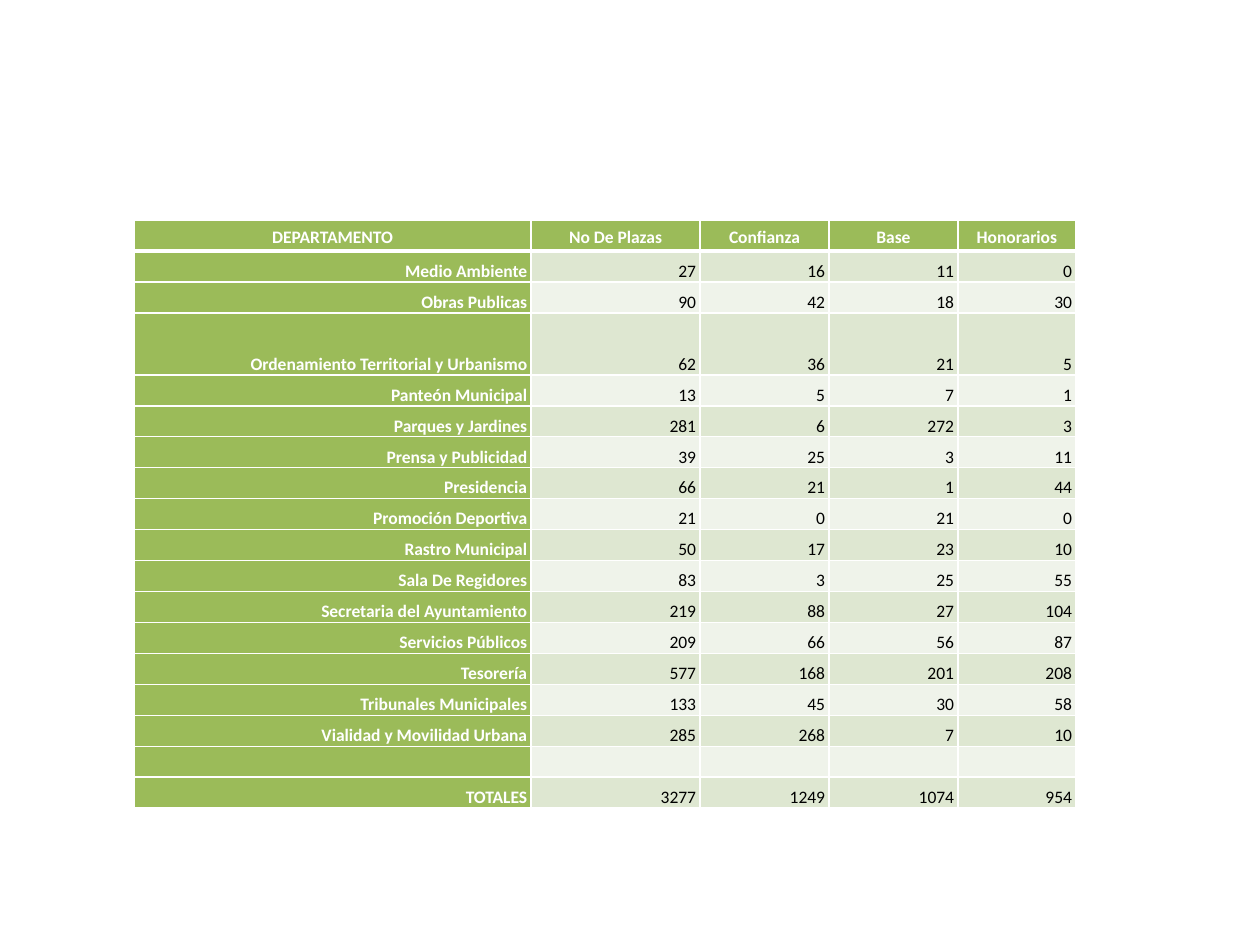
from lxml import etree
from pptx import Presentation, util as u
from pptx.dml.color import RGBColor
from pptx.enum import text
from pptx.oxml.ns import qn

PX = u.Inches(1) / 126
GREEN, WHITE, BLACK = "9BBB59", "FFFFFF", "000000"
BANDS = ["EFF3EA", "DEE7D1"]
COLUMN_WIDTHS = [397, 169, 129, 129, 118]
ROW_HEIGHT = 31
TALL_ROW = 3
STAFFING = [
    ("DEPARTAMENTO", "No De Plazas", "Confianza", "Base", "Honorarios"),
    ("Medio Ambiente", 27, 16, 11, 0),
    ("Obras Publicas", 90, 42, 18, 30),
    ("Ordenamiento Territorial y Urbanismo", 62, 36, 21, 5),
    ("Panteón Municipal", 13, 5, 7, 1),
    ("Parques y Jardines", 281, 6, 272, 3),
    ("Prensa y Publicidad", 39, 25, 3, 11),
    ("Presidencia", 66, 21, 1, 44),
    ("Promoción Deportiva", 21, 0, 21, 0),
    ("Rastro Municipal", 50, 17, 23, 10),
    ("Sala De Regidores", 83, 3, 25, 55),
    ("Secretaria del Ayuntamiento", 219, 88, 27, 104),
    ("Servicios Públicos", 209, 66, 56, 87),
    ("Tesorería", 577, 168, 201, 208),
    ("Tribunales Municipales", 133, 45, 30, 58),
    ("Vialidad y Movilidad Urbana", 285, 268, 7, 10),
    ("", "", "", "", ""),
    ("TOTALES", 3277, 1249, 1074, 954),
]


def px(length):
    """Turn pixels into EMU."""
    return u.Emu(round(length * PX))


def rgb(code):
    """Turn a hex string into a colour."""
    return RGBColor.from_string(code)


def write(paragraph, wording, size=10, color=BLACK, bold=False, align=text.PP_ALIGN.RIGHT):
    """Write formatted text in a paragraph, keeping its size when empty."""
    paragraph.alignment = align
    paragraph.line_spacing = 1.15
    if not wording:
        etree.SubElement(paragraph._p, qn("a:endParaRPr"), sz=str(size * 100))
        return
    run = paragraph.add_run()
    run.text = wording
    run.font.name = "Calibri"
    run.font.size = u.Pt(size)
    run.font.bold = bold
    run.font.color.rgb = rgb(color)


def draw_borders(cell, **widths):
    """Give the cell white borders with widths in points by side."""
    properties = cell._tc.get_or_add_tcPr()
    for side in "LRTB":
        width = u.Pt(widths.get(side, 1))
        line = etree.SubElement(properties, qn(f"a:ln{side}"), w=str(width))
        fill = etree.SubElement(line, qn("a:solidFill"))
        etree.SubElement(fill, qn("a:srgbClr"), val=WHITE)


def format_cell(cell, row, column):
    """Set the borders, fill, margins and anchor of a cell."""
    draw_borders(cell, T=3 if row == 1 else 1, B=3 if row == 0 else 1)
    cell.fill.solid()
    cell.fill.fore_color.rgb = rgb(GREEN if row == 0 or column == 0 else BANDS[row % 2])
    cell.margin_left = cell.margin_right = px(4)
    cell.margin_top = cell.margin_bottom = 0
    cell.vertical_anchor = text.MSO_ANCHOR.MIDDLE if row == 0 else text.MSO_ANCHOR.BOTTOM


def add_staffing_table(slide, left, top):
    """Add the table of positions by department."""
    heights = [ROW_HEIGHT * (2 if row == TALL_ROW else 1) for row in range(len(STAFFING))]
    table = slide.shapes.add_table(
        len(heights), len(COLUMN_WIDTHS), px(left), px(top),
        px(sum(COLUMN_WIDTHS)), px(sum(heights))).table
    table.first_col = True
    for column, width in zip(table.columns, COLUMN_WIDTHS):
        column.width = px(width)
    for r, (height, entries) in enumerate(zip(heights, STAFFING)):
        table.rows[r].height = px(height)
        for c, entry in enumerate(entries):
            cell = table.cell(r, c)
            format_cell(cell, r, c)
            heading = r == 0 or c == 0
            write(cell.text_frame.paragraphs[0], str(entry), bold=heading,
                  color=WHITE if heading else BLACK,
                  align=text.PP_ALIGN.CENTER if r == 0 else text.PP_ALIGN.RIGHT)


def main():
    """Build and save the presentation."""
    deck = Presentation()
    deck.slide_width, deck.slide_height = px(1260), px(945)
    slide = deck.slides.add_slide(deck.slide_layouts[6])
    add_staffing_table(slide, 134, 220)
    deck.save("out.pptx")


if __name__ == "__main__":
    main()
